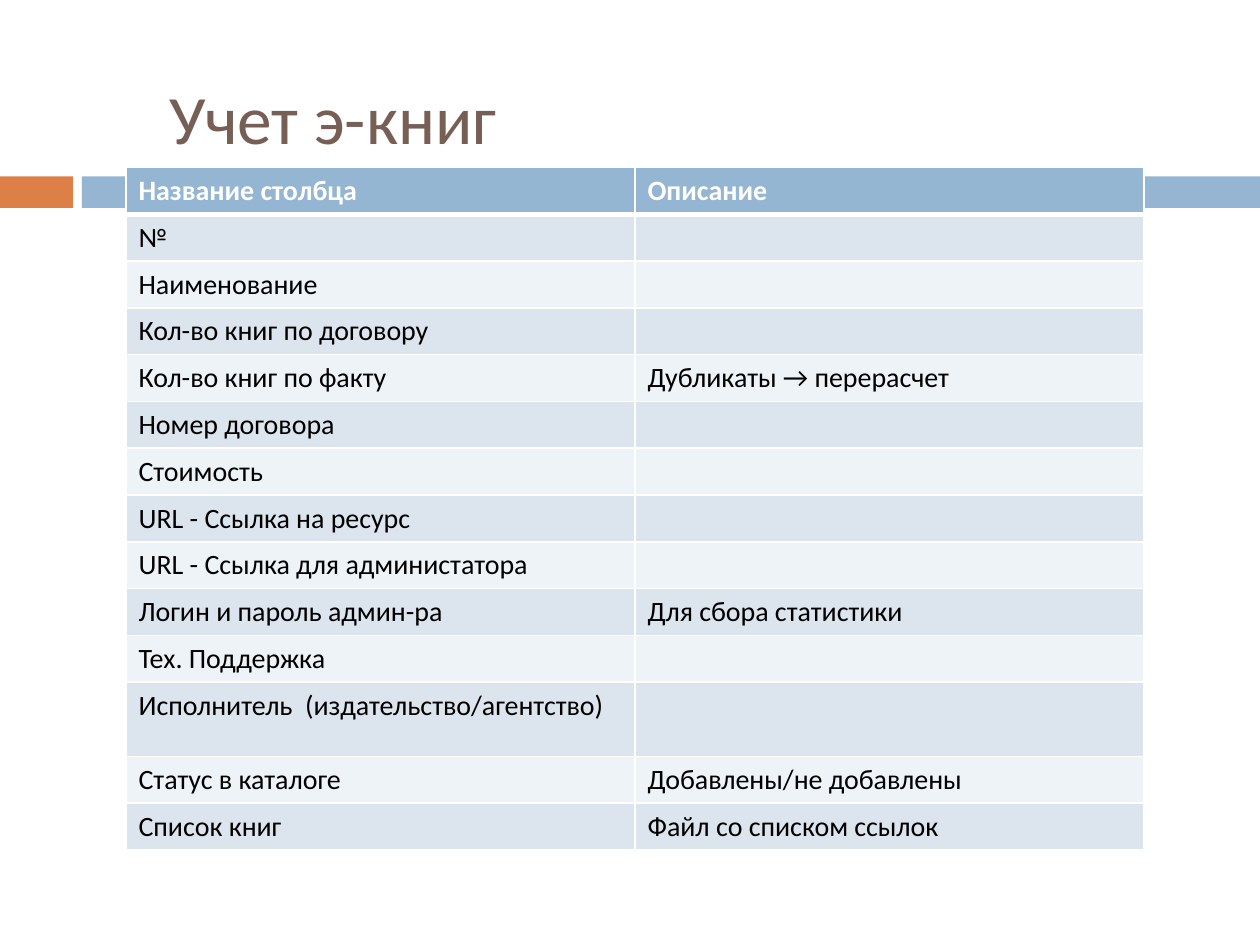
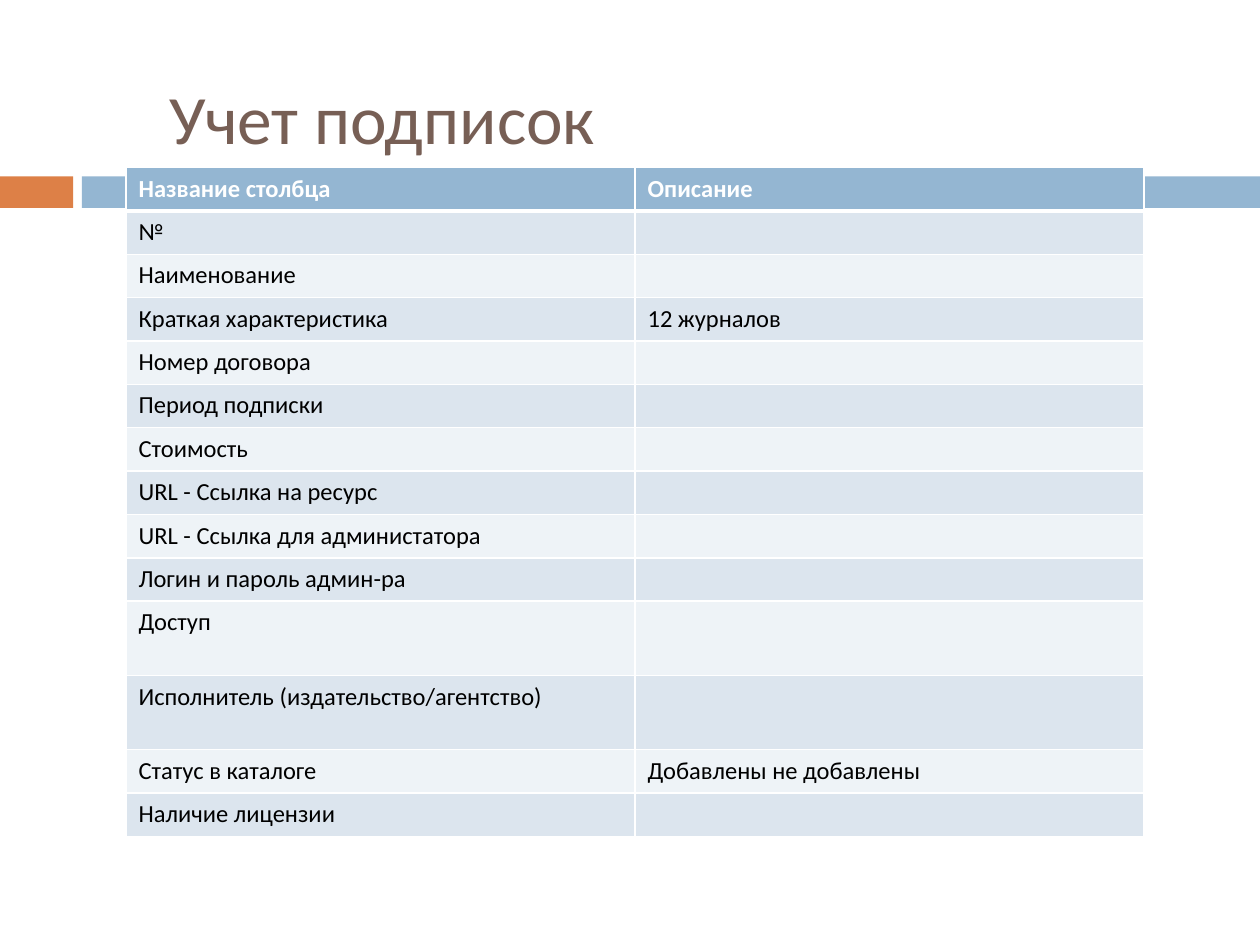
import pptx
import pptx.dml.color
import pptx.enum.shapes
import pptx.enum.text
import pptx.oxml.ns
import pptx.util
from lxml import etree
from dataclasses import dataclass

Inches, Pt = pptx.util.Inches, pptx.util.Pt
qn = pptx.oxml.ns.qn

# Content: label and description of each row
HEADER = ("Название столбца", "Описание")
SLIDES = [
    {
        "title": "Учет э-книг",
        "size": 16,
        "height": 5.42,
        "tall": ["Исполнитель  (издательство/агентство)"],
        "rows": [
            ("№", ""),
            ("Наименование", ""),
            ("Кол-во книг по договору", ""),
            ("Кол-во книг по факту", "Дубликаты → перерасчет"),
            ("Номер договора", ""),
            ("Стоимость", ""),
            ("URL - Ссылка на ресурс", ""),
            ("URL - Ссылка для администатора", ""),
            ("Логин и пароль админ-ра", "Для сбора статистики"),
            ("Тех. Поддержка", ""),
            ("Исполнитель  (издательство/агентство)", ""),
            ("Статус в каталоге", "Добавлены/не добавлены"),
            ("Список книг", "Файл со списком ссылок"),
        ],
    },
    {
        "title": "Учет подписок",
        "size": 14,
        "height": 5.31,
        "tall": ["Доступ", "Исполнитель (издательство/агентство)"],
        "rows": [
            ("№", ""),
            ("Наименование", ""),
            ("Краткая характеристика", "12 журналов"),
            ("Номер договора", ""),
            ("Период подписки", ""),
            ("Стоимость", ""),
            ("URL - Ссылка на ресурс", ""),
            ("URL - Ссылка для администатора", ""),
            ("Логин и пароль админ-ра", ""),
            ("Доступ", ""),
            ("Исполнитель (издательство/агентство)", ""),
            ("Статус в каталоге", "Добавлены не добавлены"),
            ("Наличие лицензии", ""),
        ],
    },
]


@dataclass(frozen=True)
class Theme:
    font: str = "Calibri"
    title_size: float = 39.6
    title: str = "775F55"
    accent: str = "DD8047"
    band: str = "94B6D2"
    stripes: tuple = ("DCE5EE", "EEF3F7")
    text: str = "000000"
    white: str = "FFFFFF"
    thin: int = 1
    thick: int = 3


THEME = Theme()
TABLE_LEFT, TABLE_TOP, TABLE_WIDTH = 1, 1.33, 8.08
TALL_ROW = 0.59


def rgb(code):
    return pptx.dml.color.RGBColor.from_string(code)


def style(p, size, color, bold=False):
    p.font.name = THEME.font
    p.font.size = Pt(size)
    p.font.bold = bold
    p.font.color.rgb = rgb(color)


def add_band(slide, left, width, color):
    sp = slide.shapes.add_shape(
        pptx.enum.shapes.MSO_SHAPE.RECTANGLE,
        Inches(left), Inches(1.4), Inches(width), Inches(0.25))
    sp.shadow.inherit = False
    sp.fill.solid()
    sp.fill.fore_color.rgb = rgb(color)
    sp.line.fill.background()


def add_title(slide, text):
    sp = slide.shapes.add_textbox(Inches(1.25), Inches(0.58), Inches(7.62), Inches(0.69))
    tf = sp.text_frame
    tf.word_wrap = True
    tf.vertical_anchor = pptx.enum.text.MSO_ANCHOR.MIDDLE
    p = tf.paragraphs[0]
    p.text = text
    style(p, THEME.title_size, THEME.title)


def add_borders(cell, top, bottom):
    tc_pr = cell._tc.get_or_add_tcPr()
    for side, width in (("L", THEME.thin), ("R", THEME.thin), ("T", top), ("B", bottom)):
        ln = etree.SubElement(tc_pr, qn(f"a:ln{side}"), w=str(Pt(width)))
        fill = etree.SubElement(ln, qn("a:solidFill"))
        etree.SubElement(fill, qn("a:srgbClr"), val=THEME.white)


def fill_cell(cell, text, row, size):
    is_header = row == 0
    add_borders(cell,
                THEME.thick if row == 1 else THEME.thin,
                THEME.thick if is_header else THEME.thin)
    cell.fill.solid()
    cell.fill.fore_color.rgb = rgb(THEME.band if is_header else THEME.stripes[(row - 1) % 2])
    p = cell.text_frame.paragraphs[0]
    p.text = text
    style(p, size, THEME.white if is_header else THEME.text, is_header)
    if not text:
        # An empty cell keeps the row height of its type size
        etree.SubElement(p._p, qn("a:endParaRPr"), sz=str(size * 100))


def add_register(slide, spec_data):
    rows = [HEADER] + spec_data["rows"]
    tall = spec_data["tall"]
    # Ordinary rows share the height left by the tall ones
    row_height = (spec_data["height"] - TALL_ROW * len(tall)) / (len(rows) - len(tall))
    frame = slide.shapes.add_table(
        len(rows), len(HEADER), Inches(TABLE_LEFT), Inches(TABLE_TOP),
        Inches(TABLE_WIDTH), Inches(spec_data["height"]))
    table = frame.table
    table.horz_banding = False
    for column in table.columns:
        column.width = Inches(TABLE_WIDTH / len(HEADER))
    for i, texts in enumerate(rows):
        table.rows[i].height = Inches(TALL_ROW if texts[0] in tall else row_height)
        for j, text in enumerate(texts):
            fill_cell(table.cell(i, j), text, i, spec_data["size"])


def main():
    prs = pptx.Presentation()
    prs.slide_width, prs.slide_height = Inches(10), Inches(7.5)
    for content in SLIDES:
        slide = prs.slides.add_slide(prs.slide_layouts[6])
        # Bands lie behind the title and the table
        add_band(slide, 0, 0.58, THEME.accent)
        add_band(slide, 0.65, 9.35, THEME.band)
        add_title(slide, content["title"])
        add_register(slide, content)
    prs.save("out.pptx")


if __name__ == "__main__":
    main()
